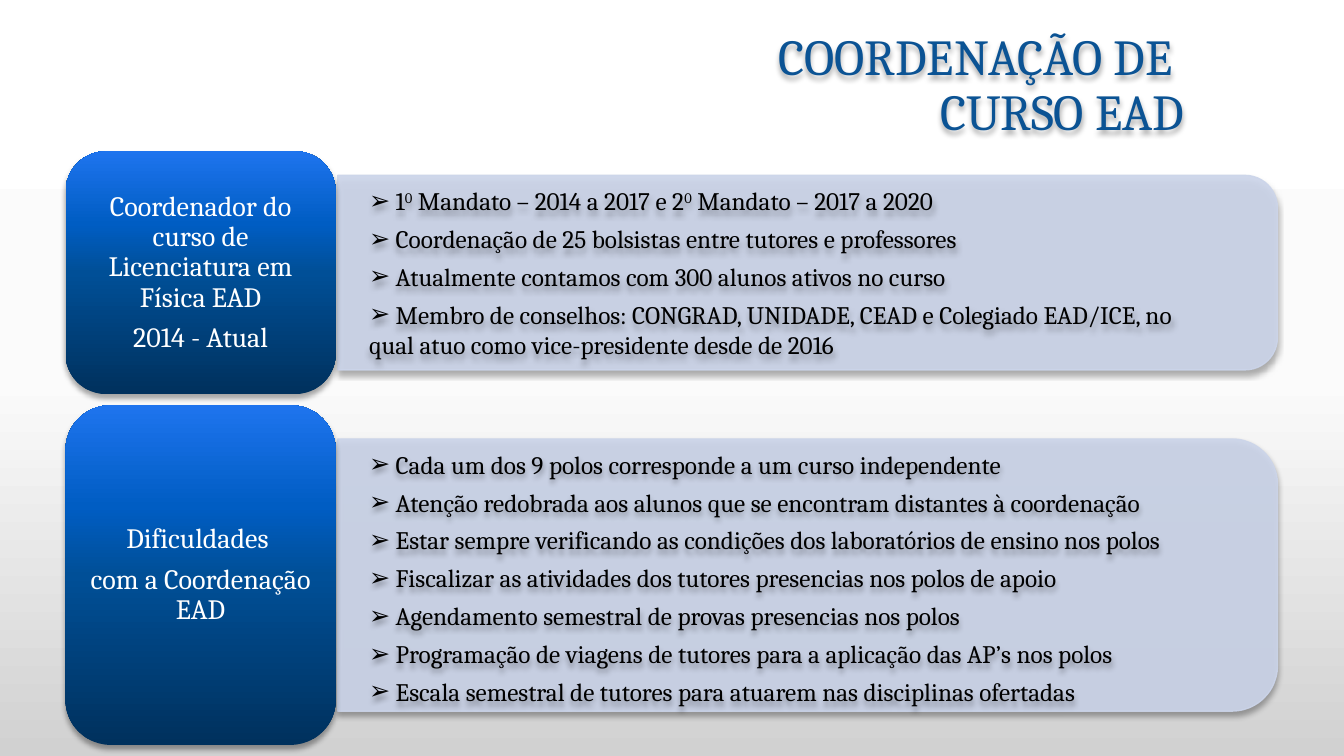
from dataclasses import dataclass

from lxml import etree
from pptx import Presentation
from pptx.dml.color import RGBColor
from pptx.enum.shapes import MSO_SHAPE as Preset
from pptx.enum.text import MSO_ANCHOR as Anchor, MSO_AUTO_SIZE as AutoSize, PP_ALIGN as Align
from pptx.oxml.ns import qn
from pptx.util import Inches, Pt


@dataclass(frozen=True)
class Theme:
    font: str = "Cambria"
    title: str = "0B5394"
    label: str = "FFFFFF"
    text: str = "000000"
    panel: str = "CCD5EA"
    shadow: str = "000000"
    backdrop: tuple = ((0, "FFFFFF"), (50, "FBFBFB"), (100, "D1D1D1"))
    label_fill: tuple = ((0, "00315D"), (50, "004F97"), (70, "005DC3"), (100, "1E74EE"))
    title_size: int = 36
    label_size: int = 20
    text_size: int = 18


THEME = Theme()

# A part between carets is superscript
MANDATES = [
    "1^0^ Mandato – 2014 a 2017 e 2^0^ Mandato – 2017 a 2020",
    "Coordenação de 25 bolsistas entre tutores e professores",
    "Atualmente contamos com 300 alunos ativos no curso",
    "Membro de conselhos: CONGRAD, UNIDADE, CEAD e Colegiado EAD/ICE, no qual atuo "
    "como vice-presidente desde de 2016",
]
DIFFICULTIES = [
    "Cada um dos 9 polos corresponde a um curso independente",
    "Atenção redobrada aos alunos que se encontram distantes à coordenação",
    "Estar sempre verificando as condições dos laboratórios de ensino nos polos",
    "Fiscalizar as atividades dos tutores presencias nos polos de apoio",
    "Agendamento semestral de provas presencias nos polos",
    "Programação de viagens de tutores para a aplicação das AP’s nos polos",
    "Escala semestral de tutores para atuarem nas disciplinas ofertadas",
]


# Formatting helpers
def add_child(parent, tag, **attributes):
    return etree.SubElement(parent, qn(tag), attributes)


def set_gradient(fill, owner, stops, angle):
    fill.gradient()
    fill.gradient_angle = angle
    stop_list = next(owner.iter(qn("a:gsLst")))
    for old_stop in list(stop_list):
        stop_list.remove(old_stop)
    for position, color in stops:
        stop = add_child(stop_list, "a:gs", pos=str(position * 1000))
        add_child(stop, "a:srgbClr", val=color)


def add_shadow(shape):
    shape.shadow.inherit = False
    effects = next(shape._element.iter(qn("a:effectLst")))
    shadow = add_child(effects, "a:outerShdw", blurRad=str(Pt(4)), dist=str(Pt(3)),
                       dir="5400000", algn="ctr", rotWithShape="0")
    color = add_child(shadow, "a:srgbClr", val=THEME.shadow)
    add_child(color, "a:alpha", val="35000")


def style_font(font, size, color):
    font.name, font.size, font.bold = THEME.font, Pt(size), False
    font.color.rgb = RGBColor.from_string(color)


def style_lines(frame, size, color, align, space_after=0):
    for paragraph in frame.paragraphs:
        paragraph.alignment = align
        paragraph.line_spacing = 0.9
        paragraph.space_before = Pt(0)
        paragraph.space_after = Pt(space_after)
        for run in paragraph.runs:
            style_font(run.font, size, color)


def place(shape, left, top, width, height):
    shape.left, shape.top = Inches(left), Inches(top)
    shape.width, shape.height = Inches(width), Inches(height)


# Title at the upper right
def build_title(title, left, top, width, height):
    place(title, left, top, width, height)
    frame = title.text_frame
    frame.text = "COORDENAÇÃO DE \nCURSO EAD"
    frame.word_wrap, frame.auto_size = True, AutoSize.NONE
    frame.vertical_anchor = Anchor.TOP
    style_lines(frame, THEME.title_size, THEME.title, Align.RIGHT)
    add_shadow(title)


# Pale panel, rounded on its right side
def build_panel(slide, left, top, width, height):
    # The preset rounds its top corners, so it is drawn upright and turned
    panel = slide.shapes.add_shape(
        Preset.ROUND_2_SAME_RECTANGLE,
        Inches(left + (width - height) / 2), Inches(top + (height - width) / 2),
        Inches(height), Inches(width))
    panel.rotation = 90
    panel.fill.solid()
    panel.line.width = Pt(1)
    for fill in (panel.fill, panel.line.fill):
        fill.solid()
        fill.fore_color.rgb = RGBColor.from_string(THEME.panel)
    for color in panel._element.spPr.iter(qn("a:srgbClr")):
        add_child(color, "a:alpha", val="90000")
    add_shadow(panel)


# Blue label with centred text
def build_label(slide, text, left, top, width, height):
    label = slide.shapes.add_shape(Preset.ROUNDED_RECTANGLE, Inches(left), Inches(top),
                                   Inches(width), Inches(height))
    set_gradient(label.fill, label._element, THEME.label_fill, 90)
    label.line.fill.background()
    add_shadow(label)
    frame = label.text_frame
    frame.text = text
    frame.word_wrap = True
    frame.vertical_anchor = Anchor.MIDDLE
    frame.margin_left = frame.margin_right = Inches(0.08)
    frame.margin_top = frame.margin_bottom = Inches(0.04)
    style_lines(frame, THEME.label_size, THEME.label, Align.CENTER, space_after=7)


# Arrow list in a body placeholder
def build_list(slide, body, items, left, top, width, height):
    slide.shapes._spTree.append(body._element)
    place(body, left, top, width, height)
    frame = body.text_frame
    frame.word_wrap, frame.auto_size = True, AutoSize.NONE
    frame.vertical_anchor = Anchor.TOP
    for number, item in enumerate(items):
        paragraph = frame.add_paragraph() if number else frame.paragraphs[0]
        properties = paragraph._p.get_or_add_pPr()
        properties.set("marL", "0")
        properties.set("indent", "0")
        add_child(properties, "a:buChar", char="➢")
        paragraph.space_before = Pt(5.4 if number else 0)
        for part_number, part in enumerate((" " + item).split("^")):
            run = paragraph.add_run()
            run.text = part
            style_font(run.font, THEME.text_size, THEME.text)
            if part_number % 2:
                run.font._element.set("baseline", "30000")
    add_shadow(body)


# One row: panel, label and list
def build_topic(slide, body, label, items, panel_height, left, top, width, height):
    label_width = 2.68
    panel_left = left + label_width + 0.02
    panel_top = top + (height - panel_height) / 2
    build_panel(slide, panel_left, panel_top, left + width - panel_left, panel_height)
    build_label(slide, label, left, top, label_width, height)
    build_list(slide, body, items, panel_left + 0.21, panel_top + 0.05, 8.61,
               panel_height - 0.05)


def main():
    deck = Presentation()
    deck.slide_width, deck.slide_height = Inches(13.33), Inches(7.5)
    slide = deck.slides.add_slide(deck.slide_layouts[3])
    set_gradient(slide.background.fill, slide._element, THEME.backdrop, 270)
    title, mandates, difficulties = slide.placeholders

    build_title(title, 7.4, 0.27, 4.44, 1.24)
    build_topic(slide, mandates,
                "Coordenador do curso de Licenciatura em Física EAD\n2014 - Atual",
                MANDATES, 1.93, 0.65, 1.5, 12.02, 2.41)
    build_topic(slide, difficulties, "Dificuldades \ncom a Coordenação EAD",
                DIFFICULTIES, 2.7, 0.65, 4.02, 12.02, 3.37)
    deck.save("out.pptx")


if __name__ == "__main__":
    main()
